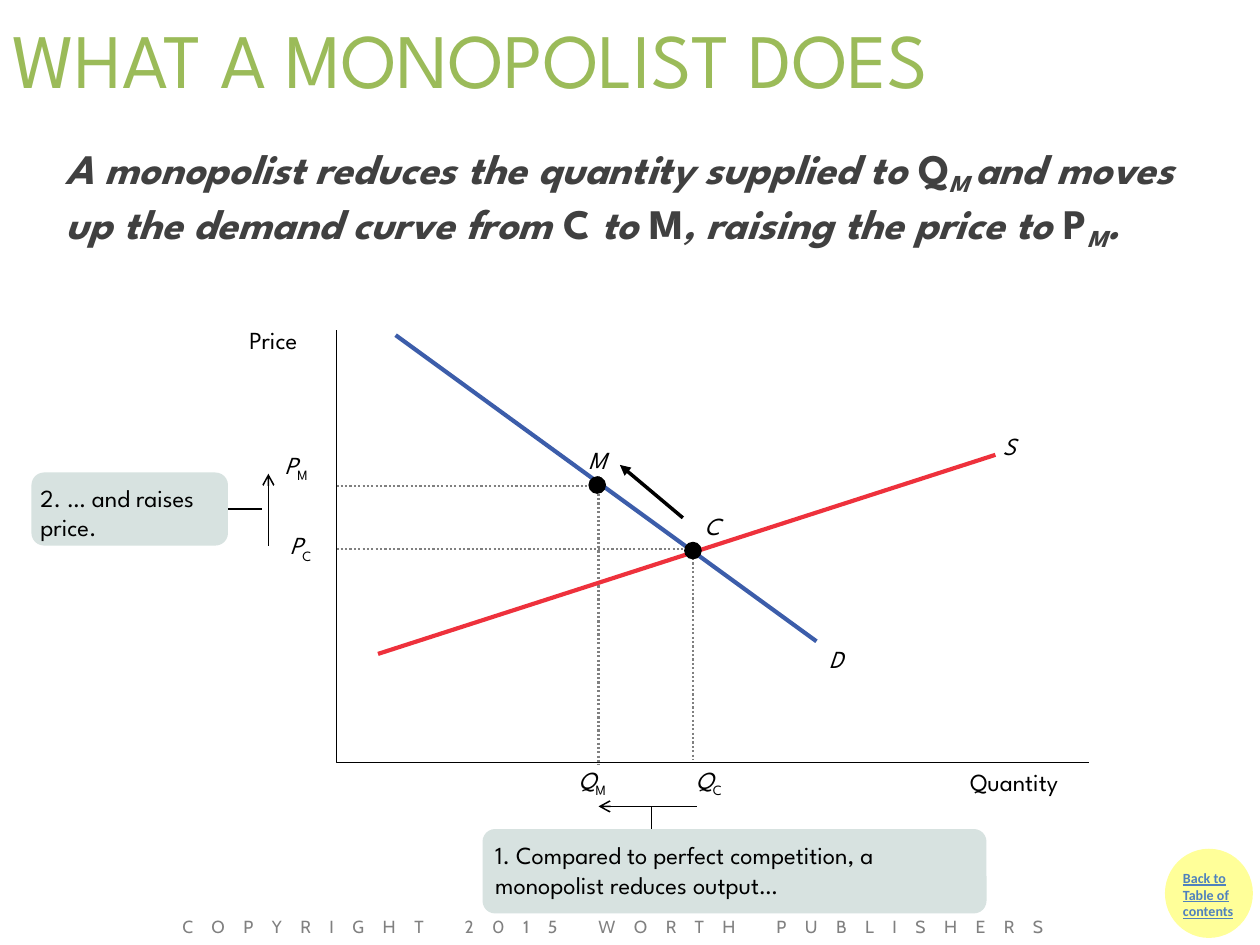
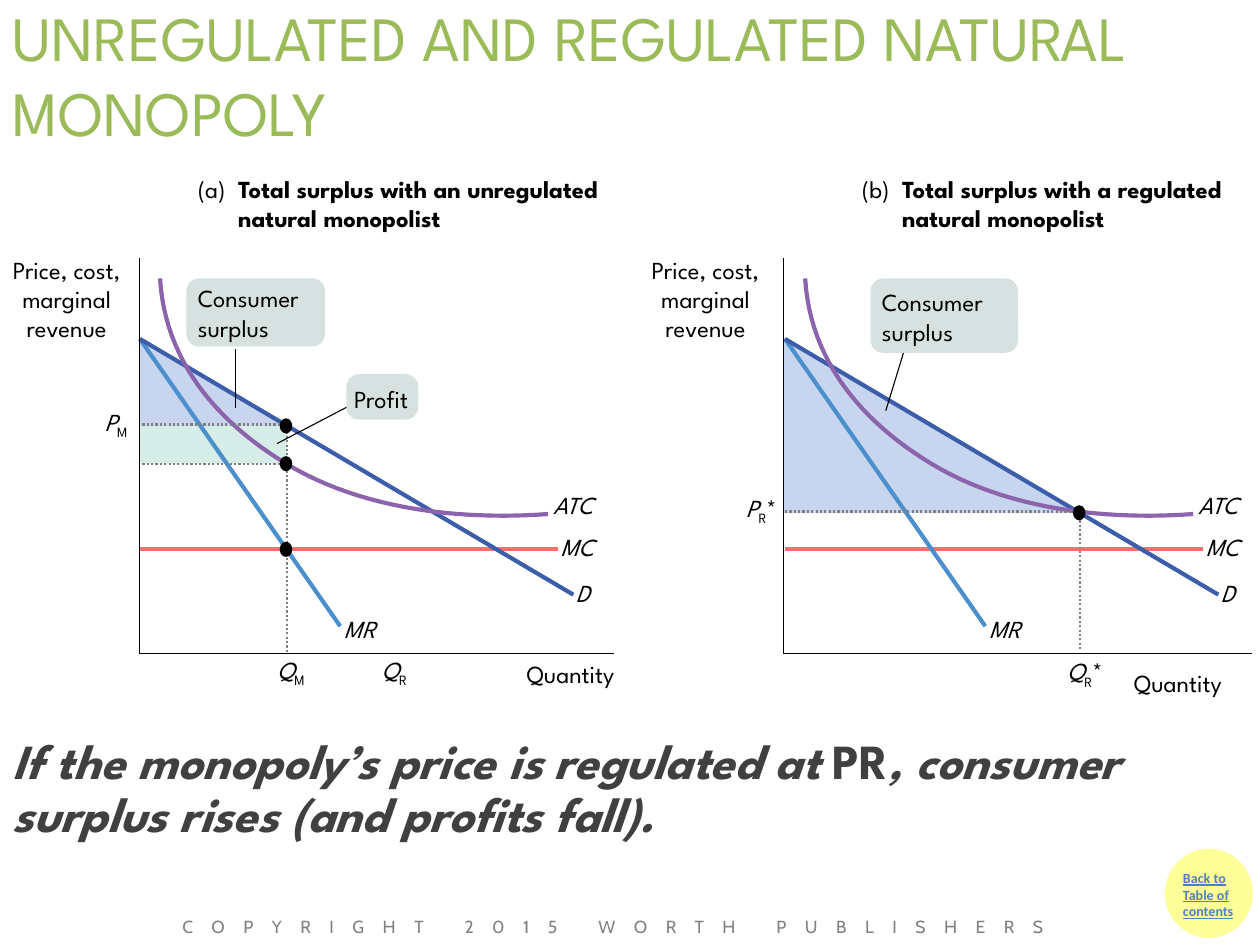
"""Build two slides on monopoly pricing and on the regulation of natural monopoly."""
import lxml.etree
import pptx
import pptx.dml.color
import pptx.enum.dml
import pptx.enum.shapes
import pptx.enum.text
import pptx.oxml.ns
import pptx.util

Inches = pptx.util.Inches
Pt = pptx.util.Pt
RGBColor = pptx.dml.color.RGBColor
SHAPE = pptx.enum.shapes.MSO_SHAPE
ALIGN = pptx.enum.text.PP_ALIGN
ANCHOR = pptx.enum.text.MSO_ANCHOR
qn = pptx.oxml.ns.qn

TITLE_GREEN = RGBColor(0x9B, 0xBB, 0x59)
BODY_GRAY = RGBColor(0x40, 0x40, 0x40)
GUIDE_GRAY = RGBColor(0x80, 0x80, 0x80)
BLACK = RGBColor(0, 0, 0)
CALLOUT_GRAY = RGBColor(0xD7, 0xE2, 0xE0)
BADGE_YELLOW = RGBColor(0xFF, 0xFF, 0x99)
LINK_BLUE = RGBColor(0x4F, 0x81, 0xBD)
DEMAND_BLUE = RGBColor(0x3C, 0x5D, 0xAA)
SUPPLY_RED = RGBColor(0xEE, 0x31, 0x3C)
REVENUE_BLUE = RGBColor(0x4B, 0x8F, 0xCC)
COST_RED = RGBColor(0xF3, 0x71, 0x6D)
AVERAGE_PURPLE = RGBColor(0x8C, 0x64, 0xAB)
SURPLUS_BLUE = RGBColor(0xC7, 0xD6, 0xEE)
PROFIT_GREEN = RGBColor(0xD7, 0xED, 0xE7)

MAIN_FONT = "League Spartan"
CURVE_WIDTH = 2.38
THIN_WIDTH = 0.63
ARROW_WIDTH = 0.88
CORNER = 0.1
LABEL_HEIGHT = 0.24


def symbol(letter, subscript="", after=""):
    """Return the spans of an italic letter with an upright subscript."""
    spans = [(letter, "i"), (subscript, "_"), (after, "")]
    return [span for span in spans if span[0]]


FOOTER = "COPYRIGHT 2015 WORTH PUBLISHERS"
BACK_LABEL = "Back to Table of contents"

MONOPOLIST = {
    "title": "WHAT A MONOPOLIST DOES",
    "body": [
        ("A monopolist reduces the quantity supplied to ", "bi"), ("Q", "b"), ("M ", "bi_"),
        ("and moves up the demand curve from ", "bi"), ("C", "b"), (" to ", "bi"), ("M", "b"),
        (", raising the price to ", "bi"), ("P", "b"), ("M", "bi_"), (".", "bi"),
    ],
    "guides": [
        ((4.75, 3.78), (4.75, 6.07)), ((2.67, 3.86), (4.69, 3.86)),
        ((2.67, 4.36), (5.5, 4.36)), ((5.5, 4.36), (5.5, 6.03)),
    ],
    "axes": [(8.64, 6.05), (2.67, 6.05), (2.67, 2.62)],
    "curves": [((3.14, 2.66), (6.48, 5.09), DEMAND_BLUE), ((7.9, 3.61), (3, 5.19), SUPPLY_RED)],
    "labels": [
        (4.67, 3.53, 0.21, symbol("M")), (5.59, 4.06, 0.19, symbol("C")),
        (7.96, 3.42, 0.13, symbol("S")), (6.58, 5.11, 0.18, symbol("D")),
        (5.52, 6.07, 0.31, symbol("Q", "C")), (4.59, 6.07, 0.3, symbol("Q", "M")),
        (2.26, 3.57, 0.26, symbol("P", "M")), (2.3, 4.21, 0.25, symbol("P", "C")),
        (7.7, 6.09, 0.83, "Quantity"), (1.98, 2.58, 0.47, "Price"),
    ],
    "arrows": [
        ((2.13, 4.33), (2.13, 3.76), ARROW_WIDTH, "arrow"),
        ((5.53, 6.4), (4.75, 6.4), ARROW_WIDTH, "arrow"),
        ((5.42, 4.11), (4.92, 3.69), 2, "triangle"),
    ],
    "points": [(5.5, 4.37), (4.74, 3.85)],
}

REGULATION = {
    "title": "UNREGULATED AND REGULATED NATURAL MONOPOLY",
    "body": [
        ("If the monopoly’s price is regulated at ", "bi"), ("PR", "b"),
        (", consumer surplus rises (and profits fall).", "bi"),
    ],
}
AXIS_TITLE = "Price, cost, marginal revenue"
PANEL_SHIFT = 5.12
PANEL_LINES = [
    ((1.11, 4.36), (4.43, 4.36), COST_RED),
    ((1.11, 2.69), (2.7, 4.97), REVENUE_BLUE),
    ((1.11, 2.69), (4.55, 4.72), DEMAND_BLUE),
]
AVERAGE_COST = [
    [(1.27, 2.21), (1.31, 2.86), (1.71, 3.34), (2.27, 3.68)],
    [(2.27, 3.68), (2.88, 4.05), (3.67, 4.13), (4.35, 4.08)],
]
PANEL_LABELS = [
    (4.57, 4.59, 0.18, symbol("D")), (4.45, 4.22, 0.37, symbol("MC")),
    (2.73, 4.87, 0.33, symbol("MR")), (4.39, 3.89, 0.43, symbol("ATC")),
]
PANELS = [
    {
        "letter": "(a)", "letter_left": 1.57, "heading_width": 3.28,
        "heading": "Total surplus with an unregulated natural monopolist",
        "axis_title_left": 0,
        "axes": [(4.87, 5.19), (1.11, 5.19), (1.11, 2.05)],
        "surplus": [(1.11, 2.69), (1.11, 3.38), (2.27, 3.38)],
        "profit": (1.11, 3.38, 1.17, 0.3),
        "guides": [
            ((2.28, 3.39), (2.28, 5.19)), ((1.13, 3.68), (2.24, 3.68)), ((1.13, 3.37), (2.23, 3.37)),
        ],
        "leaders": [((1.87, 3.24), (1.87, 2.77)), ((2.2, 3.52), (2.89, 3.16))],
        "callouts": [
            ((1.48, 2.21, 1.1, 0.54), "Consumer surplus", (0.09, 0.04)),
            ((2.75, 2.97, 0.57, 0.36), "Profit", (0.06, 0.08)),
        ],
        "labels": [
            (2.2, 5.2, 0.3, symbol("Q", "M")), (3.03, 5.2, 0.26, symbol("Q", "R")),
            (0.83, 3.23, 0.25, symbol("P", "M")), (4.18, 5.23, 0.83, "Quantity"),
        ],
        "points": [(2.27, 3.38), (2.27, 3.68), (2.27, 4.36)],
    },
    {
        "letter": "(b)", "letter_left": 6.84, "heading_width": 2.84,
        "heading": "Total surplus with a regulated natural monopolist",
        "axis_title_left": 5.07,
        "axes": [(9.94, 5.19), (6.22, 5.19), (6.22, 2.05)],
        "surplus": [(6.22, 2.68), (6.22, 4.07), (8.57, 4.07)],
        "profit": None,
        "guides": [((6.23, 4.06), (8.55, 4.06)), ((8.57, 4.13), (8.57, 5.15))],
        "leaders": [((7.03, 3.26), (7.18, 2.77))],
        "callouts": [((6.91, 2.21, 1.17, 0.59), "Consumer surplus", (0.09, 0.07))],
        "labels": [
            (8.47, 5.21, 0.47, symbol("Q", "R", "*")), (5.92, 3.91, 0.29, symbol("P", "R", "*")),
            (9, 5.3, 0.83, "Quantity"),
        ],
        "points": [(8.565, 4.07)],
    },
]


def write(frame, spans, size=14, color=BLACK, font=MAIN_FONT, flags="", subscript=-25,
          insets=(0, 0, 0, 0), wrap=True, anchor=ANCHOR.TOP, align=ALIGN.LEFT, leading=None, tracking=0):
    """Fill a text frame; flags are b bold, i italic, u underlined, _ subscript."""
    frame.word_wrap = wrap
    frame.vertical_anchor = anchor
    if not wrap:
        frame.auto_size = pptx.enum.text.MSO_AUTO_SIZE.SHAPE_TO_FIT_TEXT
    frame.margin_left, frame.margin_top, frame.margin_right, frame.margin_bottom = map(Inches, insets)
    para = frame.paragraphs[0]
    para.alignment = align
    para.line_spacing = leading
    for text, marks in [(spans, flags)] if isinstance(spans, str) else spans:
        span = para.add_run()
        span.text = text
        span.font.size = Pt(size)
        span.font.name = font
        span.font.color.rgb = color
        span.font.bold = "b" in marks
        span.font.italic = "i" in marks
        span.font.underline = "u" in marks
        properties = span.font._element
        if "_" in marks:
            properties.set("baseline", str(subscript * 1000))
        if tracking:
            properties.set("spc", str(round(tracking * 100)))


def add_text(slide, place, spans, **style):
    box = slide.shapes.add_textbox(*map(Inches, place))
    write(box.text_frame, spans, **style)


def add_padded_text(slide, place, spans, **style):
    add_text(slide, place, spans, insets=(0.1, 0.05, 0.1, 0.05), **style)


def add_labels(slide, labels, shift=0):
    for left, top, width, spans in labels:
        add_text(slide, (left + shift, top, width, LABEL_HEIGHT), spans, wrap=False)


def add_area(slide, kind, place, color):
    area = slide.shapes.add_shape(kind, *map(Inches, place))
    area.shadow.inherit = False
    area.fill.solid()
    area.fill.fore_color.rgb = color
    area.line.fill.background()
    return area


def add_callout(slide, place, text, padding):
    callout = add_area(slide, SHAPE.ROUNDED_RECTANGLE, place, CALLOUT_GRAY)
    callout.adjustments[0] = CORNER / min(place[2:])
    left, top = (pad - 0.29 * CORNER for pad in padding)
    write(callout.text_frame, text, insets=(left, top, 0, 0))
    return callout


def add_line(slide, start, end, color=BLACK, width=THIN_WIDTH, dotted=False, arrow=None):
    line = slide.shapes.add_connector(
        pptx.enum.shapes.MSO_CONNECTOR.STRAIGHT, *map(Inches, (*start, *end)))
    line.line.color.rgb = color
    line.line.width = Pt(width)
    if dotted:
        line.line.dash_style = pptx.enum.dml.MSO_LINE.ROUND_DOT
    properties = line.element.spPr
    if arrow:
        lxml.etree.SubElement(properties.find(qn("a:ln")), qn("a:tailEnd"), type=arrow)
    lxml.etree.SubElement(properties, qn("a:effectLst"))
    return line


def add_guides(slide, guides):
    for start, end in guides:
        add_line(slide, start, end, GUIDE_GRAY, 1.25, dotted=True)


def add_outline(slide, points, line=None, width=THIN_WIDTH, fill=None):
    """Draw a closed filled outline, or an open path if there is no fill."""
    corners = [(Inches(x), Inches(y)) for x, y in points]
    builder = slide.shapes.build_freeform(*corners[0], scale=1.0)
    builder.add_line_segments(corners[1:], close=fill is not None)
    outline = builder.convert_to_shape()
    outline.shadow.inherit = False
    if fill is None:
        outline.fill.background()
        outline.line.color.rgb = line
        outline.line.width = Pt(width)
    else:
        outline.fill.solid()
        outline.fill.fore_color.rgb = fill
        outline.line.fill.background()


def add_points(slide, points, width, height):
    for x, y in points:
        add_area(slide, SHAPE.OVAL, (x - width / 2, y - height / 2, width, height), BLACK)


def trace(segments, steps=24):
    """Return points along a chain of cubic curves."""
    points = [segments[0][0]]
    for segment in segments:
        for step in range(1, steps + 1):
            t = step / steps
            weights = ((1 - t) ** 3, 3 * t * (1 - t) ** 2, 3 * t * t * (1 - t), t ** 3)
            points.append(tuple(sum(w * p[axis] for w, p in zip(weights, segment)) for axis in (0, 1)))
    return points


def add_slide(deck, title, title_size, title_height):
    slide = deck.slides.add_slide(deck.slide_layouts[6])
    badge = add_area(slide, SHAPE.OVAL, (9.26, 6.75, 0.67, 0.68), BADGE_YELLOW)
    badge.line.color.rgb = BADGE_YELLOW
    badge.line.width = Pt(2)
    add_padded_text(slide, (9.29, 6.85, 0.72, 0.67), BACK_LABEL,
                    size=8, font="Calibri", color=LINK_BLUE, flags="bu")
    add_padded_text(slide, (0, 0, 10, title_height), title,
                    size=title_size, color=TITLE_GREEN, anchor=ANCHOR.MIDDLE)
    add_padded_text(slide, (1.35, 7.22, 7.76, 0.25), FOOTER,
                    size=10, font="Cabin", color=GUIDE_GRAY, tracking=10.6)
    return slide


def build_monopolist(deck):
    content = MONOPOLIST
    slide = add_slide(deck, content["title"], 44, 0.92)
    add_padded_text(slide, (0.42, 1.08, 9.17, 1.42), content["body"],
                    size=24, color=BODY_GRAY, subscript=-20)
    add_guides(slide, content["guides"])
    add_outline(slide, content["axes"], BLACK)
    for start, end, color in content["curves"]:
        add_line(slide, start, end, color, CURVE_WIDTH)
    for start, end, width, arrow in content["arrows"]:
        add_line(slide, start, end, width=width, arrow=arrow)
    price_callout = add_callout(slide, (0.25, 3.75, 1.56, 0.58), "2. … and raises price.", (0.07, 0.08))
    add_line(slide, (1.81, 4.04), (2.08, 4.04)).begin_connect(price_callout, 3)
    add_line(slide, (5.17, 6.4), (5.17, 6.6))
    add_callout(slide, (3.83, 6.58, 4, 0.67),
                "1. Compared to perfect competition, a monopolist reduces output…", (0.1, 0.09))
    add_labels(slide, content["labels"])
    add_points(slide, content["points"], 0.14, 0.14)


def build_panel(slide, panel, shift):
    add_outline(slide, panel["surplus"], fill=SURPLUS_BLUE)
    if panel["profit"]:
        add_area(slide, SHAPE.RECTANGLE, panel["profit"], PROFIT_GREEN)
    for (x1, y1), (x2, y2), color in PANEL_LINES:
        add_line(slide, (x1 + shift, y1), (x2 + shift, y2), color, CURVE_WIDTH)
    add_outline(slide, [(x + shift, y) for x, y in trace(AVERAGE_COST)], AVERAGE_PURPLE, CURVE_WIDTH)
    add_outline(slide, panel["axes"], BLACK)
    add_guides(slide, panel["guides"])
    for start, end in panel["leaders"]:
        add_line(slide, start, end)
    for place, text, padding in panel["callouts"]:
        add_callout(slide, place, text, padding)
    left = panel["letter_left"]
    add_labels(slide, [(left, 1.38, 0.28, panel["letter"])] + panel["labels"])
    add_labels(slide, PANEL_LABELS, shift)
    add_text(slide, (left + 0.32, 1.38, panel["heading_width"], 0.47), panel["heading"], flags="b")
    add_text(slide, (panel["axis_title_left"], 2.02, 1.06, 0.71), AXIS_TITLE, align=ALIGN.CENTER)
    add_points(slide, panel["points"], 0.1, 0.12)


def build_regulation(deck):
    slide = add_slide(deck, REGULATION["title"], 36, 1.17)
    add_padded_text(slide, (0, 5.8, 10, 0.95), REGULATION["body"], size=28, color=BODY_GRAY, leading=0.9)
    for index, panel in enumerate(PANELS):
        build_panel(slide, panel, index * PANEL_SHIFT)


def main():
    deck = pptx.Presentation()
    deck.slide_width, deck.slide_height = Inches(10), Inches(7.5)
    build_monopolist(deck)
    build_regulation(deck)
    deck.save("out.pptx")


if __name__ == "__main__":
    main()
